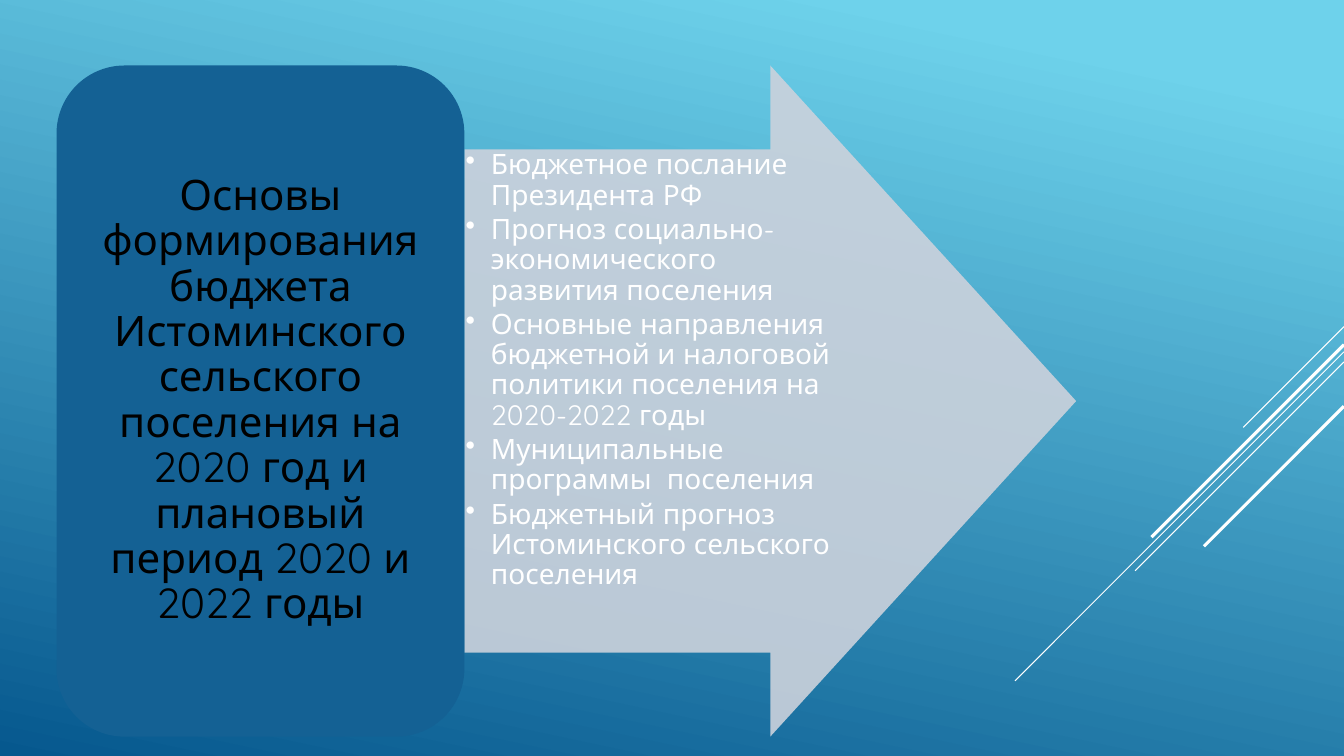
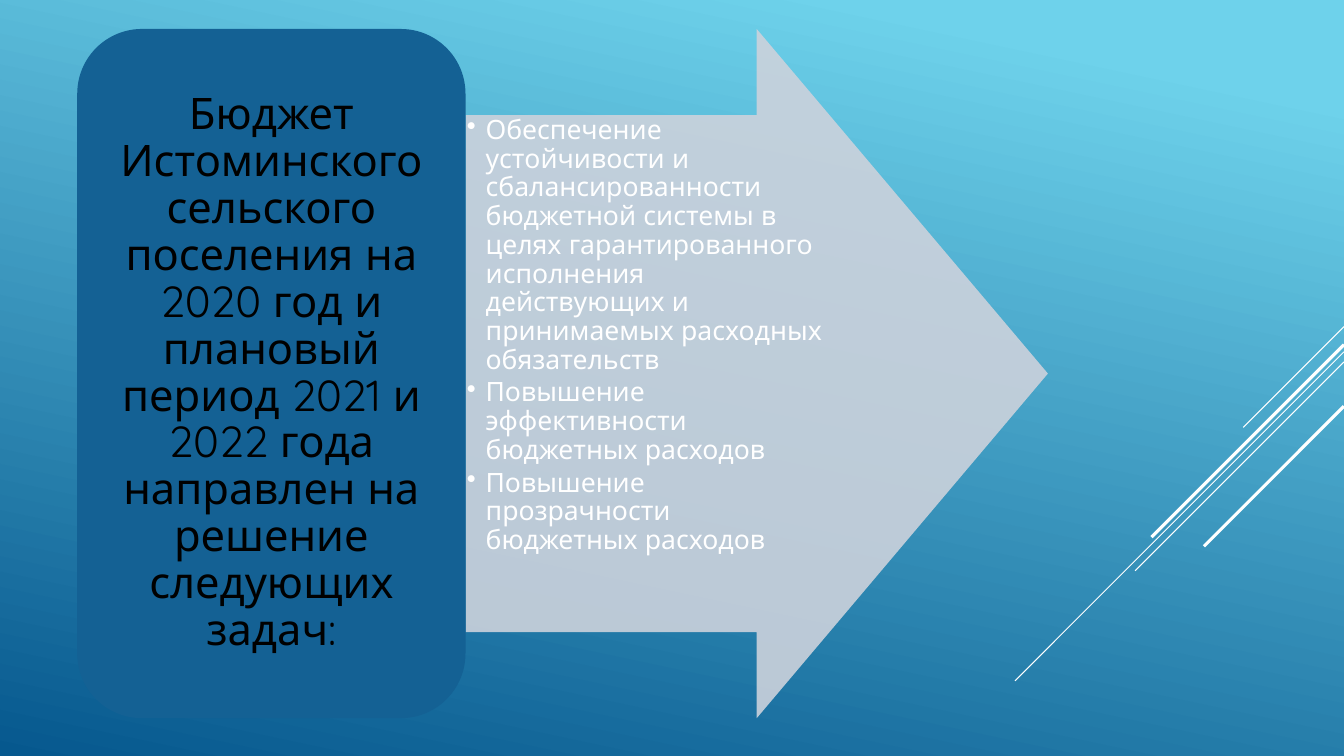
from lxml import etree
from pptx import Presentation
from pptx.dml.color import RGBColor
from pptx.enum.shapes import MSO_CONNECTOR, MSO_SHAPE
from pptx.enum.text import MSO_ANCHOR, PP_ALIGN
from pptx.oxml.ns import qn
from pptx.util import Pt

STRAIGHT = MSO_CONNECTOR.STRAIGHT
ROUNDED, ARROW = MSO_SHAPE.ROUNDED_RECTANGLE, MSO_SHAPE.RIGHT_ARROW
TOP, MIDDLE = MSO_ANCHOR.TOP, MSO_ANCHOR.MIDDLE
LEFT, CENTER = PP_ALIGN.LEFT, PP_ALIGN.CENTER

# Shared style
WIDTH, HEIGHT = 960, 540
FONT = "Quicksand"
WHITE, BLACK = "FFFFFF", "000000"
CARD_FILL, ARROW_FILL = "146194", "CCD2DC"
ARROW_OPACITY = 90
SKY = [(0.1, "6ED2EB"), (1, "06588E")]
SKY_ANGLE = 258
# Diagonals from the right edge: start height, run, line width
DIAGONALS = [
    (233.3, 72, 0.75),
    (251.3, 235, 0.75),
    (258.5, 149.2, 0.75),
    (246.2, 137.5, 2.25),
    (290.2, 100, 2.25),
]
# The arrow's shaft takes 3/4 of its height, its head half of its width
SHAFT, HEAD = 0.75, 0.5
CARD_TO_ARROW = 2 / 3

SLIDES = [
    {
        "left": 40.4, "top": 46.8, "arrow_width": 437, "height": 479.4,
        "title": "Основы формирования бюджета Истоминского сельского поселения "
                 "на 2020 год и плановый период 2020 и 2022 годы",
        "title_size": 30,
        "points": [
            "Бюджетное послание Президента РФ",
            "Прогноз социально-экономического развития поселения",
            "Основные направления бюджетной и налоговой политики поселения "
            "на 2020-2022 годы",
            "Муниципальные программы  поселения",
            "Бюджетный прогноз Истоминского сельского поселения",
        ],
        "point_size": 20, "indent": 18,
    },
    {
        "left": 55.2, "top": 20.7, "arrow_width": 416, "height": 492.3,
        "title": "Бюджет Истоминского сельского поселения на 2020 год и плановый "
                 "период 2021 и 2022 года направлен на решение следующих задач:",
        "title_size": 31,
        "points": [
            "Обеспечение устойчивости и сбалансированности бюджетной системы "
            "в целях гарантированного исполнения действующих и принимаемых "
            "расходных обязательств",
            "Повышение эффективности бюджетных расходов",
            "Повышение прозрачности бюджетных расходов",
        ],
        "point_size": 19, "indent": 13.5,
    },
]


def color(value):
    return RGBColor.from_string(value)


def paint_background(master):
    fill = master.background.fill
    fill.gradient()
    fill.gradient_angle = SKY_ANGLE
    for stop, (position, value) in zip(fill.gradient_stops, SKY):
        stop.position = position
        stop.color.rgb = color(value)


def add_diagonals(page):
    for start, run, weight in DIAGONALS:
        line = page.shapes.add_connector(
            STRAIGHT, Pt(WIDTH), Pt(start), Pt(WIDTH - run), Pt(start + run))
        line.line.color.rgb = color(WHITE)
        line.line.width = Pt(weight)
        etree.SubElement(line.element.spPr, qn("a:effectLst"))


def add_panel(page, kind, frame, fill):
    shape = page.shapes.add_shape(kind, *map(Pt, frame))
    shape.shadow.inherit = False
    shape.fill.solid()
    shape.fill.fore_color.rgb = color(fill)
    shape.line.fill.background()
    return shape


def add_bullet(para, indent):
    para.level = 1
    props = para._p.get_or_add_pPr()
    props.set("marL", str(Pt(indent)))
    props.set("indent", str(-Pt(indent)))
    etree.SubElement(props, qn("a:buChar"), char="•")


def write(shape, texts, size, ink, anchor, align, margins, gap, indent=None):
    frame = shape.text_frame
    frame.word_wrap = True
    frame.vertical_anchor = anchor
    frame.margin_left = frame.margin_right = Pt(margins[0])
    frame.margin_top = frame.margin_bottom = Pt(margins[1])
    for index, text in enumerate(texts):
        para = frame.add_paragraph() if index else frame.paragraphs[0]
        para.alignment = align
        para.line_spacing = 0.9
        para.space_after = Pt(gap * size)
        if indent:
            add_bullet(para, indent)
        span = para.add_run()
        span.text = text
        span.font.name = FONT
        span.font.size = Pt(size)
        span.font.color.rgb = color(ink)


def build_slide(deck, item):
    page = deck.slides.add_slide(deck.slide_layouts[6])
    add_diagonals(page)
    left, top, height = item["left"], item["top"], item["height"]
    arrow_width = item["arrow_width"]
    card_width = arrow_width * CARD_TO_ARROW
    arrow_left = left + card_width

    # Translucent arrow
    arrow = add_panel(page, ARROW, (arrow_left, top, arrow_width, height), ARROW_FILL)
    arrow.adjustments[0], arrow.adjustments[1] = SHAFT, HEAD
    tint = arrow.element.spPr.find(".//" + qn("a:srgbClr"))
    etree.SubElement(tint, qn("a:alpha"), val=str(ARROW_OPACITY * 1000))

    # Points, from the shaft to a quarter of the way into the head
    box = page.shapes.add_textbox(
        Pt(arrow_left), Pt(top + height * (1 - SHAFT) / 2),
        Pt(arrow_width * (1 - HEAD * SHAFT)), Pt(height * SHAFT))
    write(box, item["points"], item["point_size"], WHITE, TOP, LEFT,
          (0.9, 0.9), 0.15, item["indent"])

    # Title card
    card = add_panel(page, ROUNDED, (left, top, card_width, height), CARD_FILL)
    size = item["title_size"]
    write(card, [item["title"]], size, BLACK, MIDDLE, CENTER,
          (0.3 * size, 0.15 * size), 0.35)


def main():
    deck = Presentation()
    deck.slide_width, deck.slide_height = Pt(WIDTH), Pt(HEIGHT)
    paint_background(deck.slide_master)
    for item in SLIDES:
        build_slide(deck, item)
    deck.save("out.pptx")


if __name__ == "__main__":
    main()
